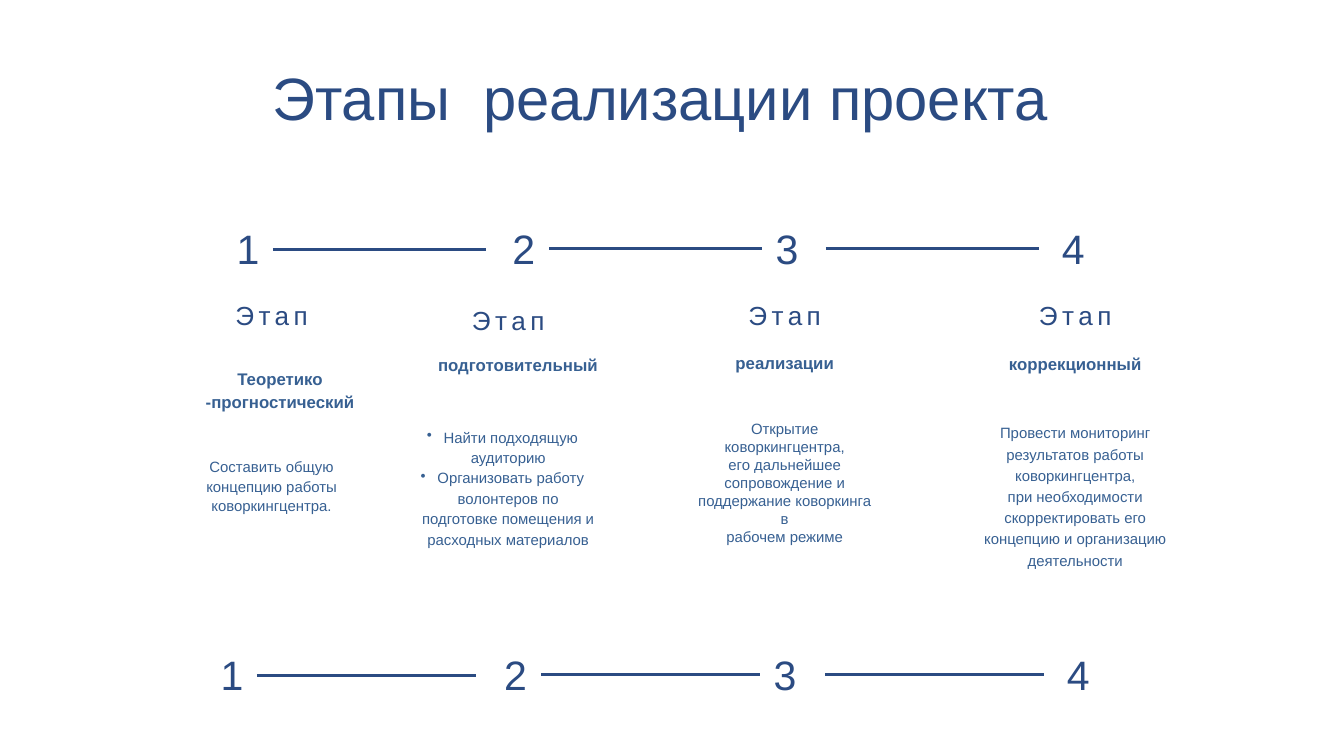
import pptx
import pptx.dml.color
import pptx.enum.shapes
import pptx.enum.text
import pptx.oxml
import pptx.oxml.ns
import pptx.util

EMU_PER_PX = 9525
NAVY = "2B4B82"
BLUE = "376092"

STAGES = [
    {
        "left": 288, "width": 200, "label_top": 420,
        "name": "Теоретико -прогностический", "name_at": (288, 523, 224, 64),
        "body_top": 651, "body_height": 146, "spacing": 21.1, "bullets": False,
        "body": ["Составить общую концепцию работы коворкингцентра."],
    },
    {
        "left": 600, "width": 252, "label_top": 428,
        "name": "подготовительный", "name_at": (614, 503, 252, 33),
        "body_top": 608, "body_height": 207, "spacing": 21.9, "bullets": True,
        "body": [
            "Найти подходящую аудиторию",
            "Организовать работу волонтеров по подготовке помещения и расходных материалов",
        ],
    },
    {
        "left": 992, "width": 258, "label_top": 420,
        "name": "реализации", "name_at": (992, 500, 258, 33),
        "body_top": 599, "body_height": 180, "spacing": 19.4, "bullets": False,
        "body": [
            "Открытие коворкингцентра,",
            "его дальнейшее сопровождение и поддержание коворкинга в",
            "рабочем режиме",
        ],
    },
    {
        "left": 1400, "width": 272, "label_top": 420,
        "name": "коррекционный", "name_at": (1400, 501, 272, 29),
        "body_top": 601, "body_height": 290, "spacing": 22.7, "bullets": False,
        "body": [
            "Провести мониторинг результатов работы коворкингцентра,",
            "при необходимости скорректировать его концепцию и организацию деятельности",
        ],
    },
]


def px(value):
    return pptx.util.Emu(value * EMU_PER_PX)


def color(value):
    return pptx.dml.color.RGBColor.from_string(value)


def add_bullet(para):
    properties = para._p.get_or_add_pPr()
    properties.set("marL", "0")
    properties.set("indent", str(-px(24)))
    bullet = pptx.oxml.parse_xml(
        f'<a:buChar {pptx.oxml.ns.nsdecls("a")} char="•"/>'
    )
    properties.append(bullet)


def write(box, lines, size, fill, spacing, bold=False, tracking=0, bullets=False):
    frame = box.text_frame
    frame.word_wrap = True
    frame.auto_size = pptx.enum.text.MSO_AUTO_SIZE.NONE
    frame.vertical_anchor = pptx.enum.text.MSO_ANCHOR.TOP
    frame.margin_left = frame.margin_right = 0
    frame.margin_top = frame.margin_bottom = 0
    frame.text = "\n".join(lines)
    for para in frame.paragraphs:
        para.alignment = pptx.enum.text.PP_ALIGN.CENTER
        para.line_spacing = pptx.util.Pt(spacing)
        if bullets:
            add_bullet(para)
        for span in para.runs:
            span.font.name = "Arial"
            span.font.size = pptx.util.Pt(size)
            span.font.bold = bold
            span.font.color.rgb = color(fill)
            if tracking:
                span._r.get_or_add_rPr().set("spc", str(tracking))


def add_text(shapes, at, lines, size, fill, spacing, **style):
    box = shapes.add_textbox(*map(px, at))
    write(box, lines, size, fill, spacing, **style)


def add_line(shapes, left, top, length):
    line = shapes.add_connector(
        pptx.enum.shapes.MSO_CONNECTOR.STRAIGHT,
        px(left), px(top), px(left + length), px(top),
    )
    line.line.color.rgb = color(NAVY)
    line.line.width = pptx.util.Pt(3)
    effects = pptx.oxml.parse_xml(f'<a:effectLst {pptx.oxml.ns.nsdecls("a")}/>')
    line._element.spPr.append(effects)


def add_title(page, text):
    title = page.shapes.title
    title.left, title.top, title.width, title.height = map(px, (108, 87, 1694, 104))
    write(title, [text], 64, NAVY, 76.8)


def add_stage(page, stage):
    shapes = page.shapes.add_group_shape().shapes
    left, width = stage["left"], stage["width"]
    add_text(shapes, (left, stage["label_top"], width, 46), ["Этап"],
             28, NAVY, 39.2, tracking=480)
    add_text(shapes, (left, stage["body_top"], width, stage["body_height"]),
             stage["body"], 16, BLUE, stage["spacing"], bullets=stage["bullets"])
    add_text(shapes, stage["name_at"], [stage["name"]], 18, BLUE, 24.4, bold=True)


def add_timeline(page, top, number_lefts, number_width, line_left, line_length, line_step):
    shapes = page.shapes.add_group_shape().shapes
    for number, left in enumerate(number_lefts, 1):
        add_text(shapes, (left, top, number_width, 87), [str(number)],
                 44, NAVY, 61.6, tracking=750)
    for index in range(len(number_lefts) - 1):
        line_top = top + (48 if index == 0 else 47) + (1 if top > 540 else 0)
        add_line(shapes, line_left + index * line_step, line_top, line_length)


def main():
    deck = pptx.Presentation()
    deck.slide_width, deck.slide_height = px(1920), px(1080)
    page = deck.slides.add_slide(deck.slide_layouts[5])
    add_title(page, "Этапы  реализации проекта ")
    for stage in STAGES:
        add_stage(page, stage)
    add_timeline(page, 308, (320, 714, 1090, 1499), 69, 390, 304, 395)
    add_timeline(page, 916, (296, 701, 1086, 1505), 71, 367, 313, 406)
    deck.save("out.pptx")


if __name__ == "__main__":
    main()
